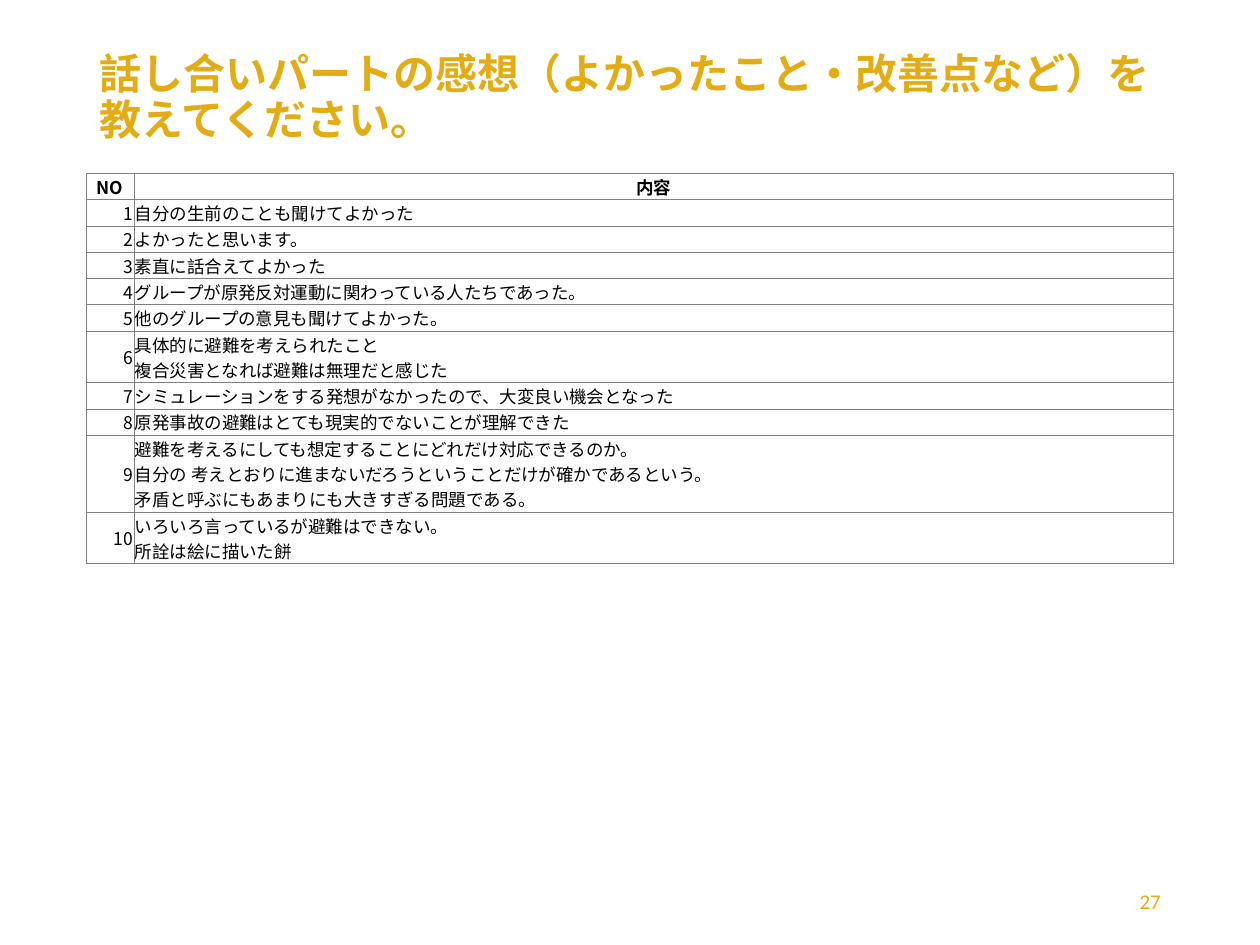
from lxml.etree import SubElement
from pptx import Presentation
from pptx.dml.color import RGBColor
from pptx.enum.text import MSO_ANCHOR as Anchor, MSO_AUTO_SIZE as AutoSize, PP_ALIGN as Align
from pptx.oxml.ns import qn
from pptx.util import Cm, Pt

COLORS = {"gold": "E4AC14", "black": "000000", "grid": "808080"}
JAPANESE = "Noto Sans CJK JP"
COMMENTS = [
    "自分の生前のことも聞けてよかった",
    "よかったと思います。",
    "素直に話合えてよかった",
    "グループが原発反対運動に関わっている人たちであった。",
    "他のグループの意見も聞けてよかった。",
    "具体的に避難を考えられたこと\n複合災害となれば避難は無理だと感じた",
    "シミュレーションをする発想がなかったので、大変良い機会となった",
    "原発事故の避難はとても現実的でないことが理解できた",
    "避難を考えるにしても想定することにどれだけ対応できるのか。\n"
    "自分の 考えとおりに進まないだろうということだけが確かであるという。\n"
    "矛盾と呼ぶにもあまりにも大きすぎる問題である。",
    "いろいろ言っているが避難はできない。\n所詮は絵に描いた餅",
]


def write(frame, text, size=10, color="black", font=JAPANESE, bold=False,
          align=Align.LEFT, spacing=None):
    """Fill a text frame with one paragraph; a newline becomes a line break."""
    frame.word_wrap = True
    frame.vertical_anchor = Anchor.MIDDLE
    para = frame.paragraphs[0]
    para.alignment = align
    para.line_spacing = spacing
    for number, line in enumerate(text.split("\n")):
        if number:
            para.add_line_break()
        span = para.add_run()
        span.text = line
        span.font.size = Pt(size)
        span.font.bold = bold
        span.font.name = font
        span.font.color.rgb = RGBColor.from_string(COLORS[color])
        SubElement(span.font._element, qn("a:ea"), typeface=font)
    for line_break in para._p.findall(qn("a:br")):
        SubElement(line_break, qn("a:rPr"), sz=str(size * 100))


def draw_borders(cell):
    properties = cell._tc.get_or_add_tcPr()
    for index, side in enumerate(("a:lnL", "a:lnR", "a:lnT", "a:lnB")):
        line = properties.makeelement(qn(side), {"w": str(Pt(0.25))})
        fill = SubElement(line, qn("a:solidFill"))
        SubElement(fill, qn("a:srgbClr"), val=COLORS["grid"])
        properties.insert(index, line)


deck = Presentation()
deck.slide_width, deck.slide_height = Cm(25.4), Cm(19.05)
page = deck.slides.add_slide(deck.slide_layouts[5])

title = page.shapes.title
title.left, title.top, title.width, title.height = Cm(1.75), Cm(1), Cm(21.9), Cm(1.98)
title.text_frame.auto_size = AutoSize.NONE
write(title.text_frame, "話し合いパートの感想（よかったこと・改善点など）を教えてください。",
      size=24, color="gold", bold=True, spacing=0.9)

page_number = page.shapes.add_textbox(Cm(17.93), Cm(17.65), Cm(5.72), Cm(1.02))
write(page_number.text_frame, "27", size=12, color="gold", font="Calibri", align=Align.RIGHT)

rows = [("NO", "内容")] + [(str(number), text) for number, text in enumerate(COMMENTS, 1)]
row_heights = [Cm(0.02 + 0.51 * len(text.split("\n"))) for _, text in rows]
table = page.shapes.add_table(len(rows), 2, Cm(1.74), Cm(3.49), Cm(21.91),
                              sum(row_heights)).table
table.first_row = table.horz_banding = False
table.columns[0].width, table.columns[1].width = Cm(0.96), Cm(20.95)

for row_index, row in enumerate(rows):
    table.rows[row_index].height = row_heights[row_index]
    for column_index, text in enumerate(row):
        cell = table.cell(row_index, column_index)
        cell.margin_left = cell.margin_right = cell.margin_top = Cm(0.02)
        cell.margin_bottom = 0
        cell.fill.background()
        draw_borders(cell)
        header = row_index == 0
        align = Align.CENTER if header else (Align.RIGHT, Align.LEFT)[column_index]
        write(cell.text_frame, text, bold=header, align=align)
        cell.vertical_anchor = Anchor.MIDDLE

deck.save("out.pptx")
